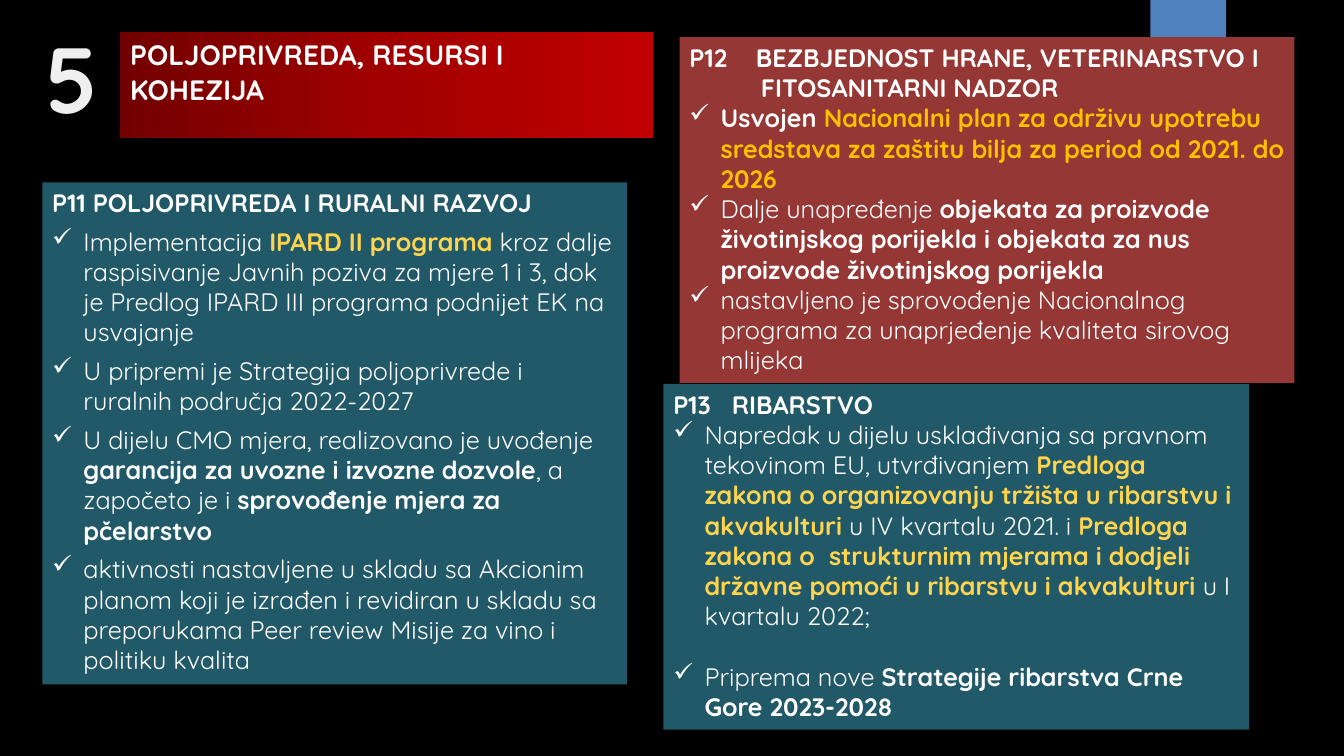
import lxml.etree
import pptx
import pptx.dml.color
import pptx.enum.shapes
import pptx.enum.text
import pptx.oxml
import pptx.oxml.ns
import pptx.util

COLORS = {"background": "000000", "tab": "4F81BD", "teal": "215968", "red": "953735",
          "white": "FFFFFF", "yellow": "FFD54F", "amber": "FFC000", "number": "FCFCFD"}
HEADING_STOPS = {0: "720000", 50: "A20000", 100: "C00000"}
FONT = "Quicksand"
BODY_SIZE = 18
HANG = 0.31
LINE_PITCH = 21.6

presentation = pptx.Presentation()
presentation.slide_width = pptx.util.Inches(13.33)
presentation.slide_height = pptx.util.Inches(7.5)
slide = presentation.slides.add_slide(presentation.slide_layouts[6])
slide.background.fill.solid()
slide.background.fill.fore_color.rgb = pptx.dml.color.RGBColor.from_string(COLORS["background"])


def percent_box(left, top, width, height):
    across, down = presentation.slide_width / 100, presentation.slide_height / 100
    return [pptx.util.Emu(round(length)) for length in
            (left * across, top * down, width * across, height * down)]


def add_run(paragraph, text, color="white", bold=False, size=BODY_SIZE):
    run = paragraph.add_run()
    run.text = text
    run.font.name = FONT
    run.font.size = pptx.util.Pt(size)
    run.font.bold = bold
    run.font.color.rgb = pptx.dml.color.RGBColor.from_string(COLORS[color])
    return run


fisheries = [
    ("tab", 0.58, 0, [("P13\tRIBARSTVO", "white", True)]),
    ("bullet", HANG, 0, [
        ("Napredak u dijelu usklađivanja sa pravnom tekovinom EU, utvrđivanjem ", "white", False),
        ("Predloga zakona o organizovanju tržišta u ribarstvu i akvakulturi ", "yellow", True),
        ("u IV kvartalu 2021. i ", "white", False),
        ("Predloga zakona o  strukturnim mjerama i dodjeli državne pomoći u ribarstvu i akvakulturi ",
         "yellow", True),
        ("u I kvartalu 2022;", "white", False)]),
    ("bullet", HANG, LINE_PITCH, [
        ("Priprema nove ", "white", False),
        ("Strategije ribarstva Crne Gore 2023-2028", "white", True)]),
]
food_safety = [
    ("tab", 0.66, 0, [("P12\tBEZBJEDNOST HRANE, VETERINARSTVO I", "white", True)]),
    ("plain", 0.71, 0, [("FITOSANITARNI NADZOR", "white", True)]),
    ("bullet", HANG, 0, [
        ("Usvojen ", "white", True),
        ("Nacionalni plan za održivu upotrebu sredstava za zaštitu bilja za period od 2021. do 2026",
         "amber", True)]),
    ("bullet", HANG, 0, [
        ("Dalje unapređenje ", "white", False),
        ("objekata za proizvode životinjskog porijekla i objekata za nus proizvode "
         "životinjskog porijekla", "white", True)]),
    ("bullet", HANG, 0, [
        ("nastavljeno je sprovođenje Nacionalnog programa za unaprjeđenje kvaliteta sirovog mlijeka",
         "white", False)]),
]
agriculture = [
    ("plain", 0, 0, [("P11 POLJOPRIVREDA I RURALNI RAZVOJ", "white", True)]),
    ("bullet", HANG, 6, [
        ("Implementacija ", "white", False),
        ("IPARD II programa ", "yellow", True),
        ("kroz dalje raspisivanje Javnih poziva za mjere 1 i 3, dok je Predlog IPARD III programa "
         "podnijet EK na usvajanje", "white", False)]),
    ("bullet", HANG, 6, [
        ("U pripremi je Strategija poljoprivrede i ruralnih područja 2022-2027", "white", False)]),
    ("bullet", HANG, 6, [
        ("U dijelu CMO mjera, realizovano je uvođenje ", "white", False),
        ("garancija za uvozne i izvozne dozvole", "white", True),
        (", a započeto je i ", "white", False),
        ("sprovođenje mjera za pčelarstvo", "white", True)]),
    ("bullet", HANG, 6, [
        ("aktivnosti nastavljene u skladu sa Akcionim planom koji je izrađen i revidiran u skladu sa "
         "preporukama Peer review Misije za vino i politiku kvalita", "white", False)]),
]
panels = [
    ((85.6, 0, 5.63, 16.67), "tab", []),
    ((49.36, 50.8, 43.59, 45.73), "teal", fisheries),
    ((50.56, 4.93, 45.76, 45.73), "red", food_safety),
    ((3.15, 24.13, 43.51, 66.4), "teal", agriculture),
]

for box, fill_color, paragraphs in panels:
    panel = slide.shapes.add_shape(pptx.enum.shapes.MSO_SHAPE.RECTANGLE, *percent_box(*box))
    panel.shadow.inherit = False
    panel.fill.solid()
    panel.fill.fore_color.rgb = pptx.dml.color.RGBColor.from_string(COLORS[fill_color])
    panel.line.fill.background()
    frame = panel.text_frame
    frame.word_wrap = True
    frame.vertical_anchor = pptx.enum.text.MSO_ANCHOR.TOP
    for index, (kind, indent, space_before, runs) in enumerate(paragraphs):
        paragraph = frame.add_paragraph() if index else frame.paragraphs[0]
        paragraph.alignment = pptx.enum.text.PP_ALIGN.LEFT
        paragraph.space_before = pptx.util.Pt(space_before)
        properties = paragraph._p.get_or_add_pPr()
        offset = pptx.util.Inches(indent)
        if kind == "tab":
            tabs = lxml.etree.SubElement(properties, pptx.oxml.ns.qn("a:tabLst"))
            lxml.etree.SubElement(tabs, pptx.oxml.ns.qn("a:tab"), pos=str(offset), algn="l")
        else:
            properties.set("marL", str(offset))
        if kind == "bullet":
            properties.set("indent", str(-offset))
            lxml.etree.SubElement(properties, pptx.oxml.ns.qn("a:buChar"), char="✓")
        for text, color, bold in runs:
            add_run(paragraph, text, color, bold)

heading_frame = slide.shapes.add_table(1, 1, *percent_box(8.93, 4.27, 39.68, 14))
heading = heading_frame.table.cell(0, 0)
add_run(heading.text_frame.paragraphs[0], "POLJOPRIVREDA, RESURSI I KOHEZIJA", bold=True, size=20)
cell_properties = heading._tc.get_or_add_tcPr()
for side in ("lnL", "lnR", "lnT", "lnB"):
    border = lxml.etree.SubElement(cell_properties, pptx.oxml.ns.qn(f"a:{side}"), w="0")
    lxml.etree.SubElement(border, pptx.oxml.ns.qn("a:noFill"))
stops = "".join(f'<a:gs pos="{position * 1000}"><a:srgbClr val="{color}"/></a:gs>'
                for position, color in HEADING_STOPS.items())
cell_properties.append(pptx.oxml.parse_xml(
    f'<a:gradFill {pptx.oxml.ns.nsdecls("a")}><a:gsLst>{stops}</a:gsLst>'
    '<a:lin ang="0" scaled="0"/></a:gradFill>'))

number_box = slide.shapes.add_textbox(*percent_box(2.63, 2.13, 5.48, 16.13))
number_box.text_frame.word_wrap = False
number_paragraph = number_box.text_frame.paragraphs[0]
number_paragraph.alignment = pptx.enum.text.PP_ALIGN.CENTER
number_run = add_run(number_paragraph, "5", "number", True, 66)
number_color = number_run._r.find(".//" + pptx.oxml.ns.qn("a:srgbClr"))
lxml.etree.SubElement(number_color, pptx.oxml.ns.qn("a:alpha"), val="95000")

presentation.save("out.pptx")
